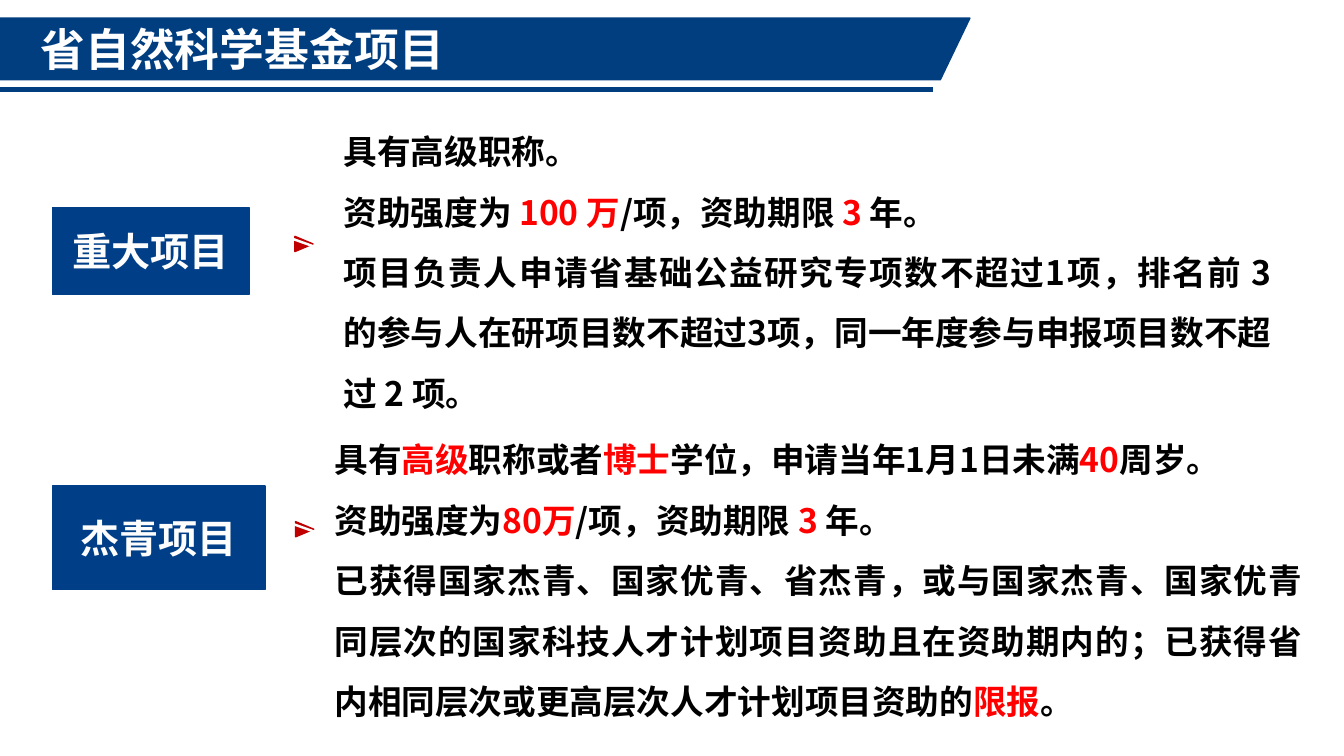
"""Build the slide on provincial natural science fund projects."""
from dataclasses import dataclass

from lxml import etree
from pptx import Presentation, util as u
from pptx.dml.color import RGBColor
from pptx.enum import shapes, text
from pptx.oxml.ns import qn


@dataclass(frozen=True)
class Theme:
    """Colours, type sizes and font of the slide."""
    font: str = "Noto Sans CJK SC"
    paper: str = "FFFFFF"
    banner: str = "013E80"
    label: str = "003F88"
    label_text: str = "FDFDFD"
    ink: str = "000000"
    accent: str = "FF0000"
    arrow: str = "C00000"
    title_size: int = 32
    label_size: int = 28
    body_size: int = 24


@dataclass(frozen=True)
class Area:
    """A frame in percent of the slide's width and height."""
    left: float
    top: float
    width: float
    height: float


@dataclass(frozen=True)
class Project:
    """A project label, its arrow and its rules, with accents between asterisks."""
    name: str
    label: Area
    arrow: Area
    body: Area
    rules: tuple[str, ...]


THEME = Theme()
WIDTH, HEIGHT = u.Inches(13.33), u.Inches(7.5)
BANNER = Area(-2.18, 2.4, 74.33, 8.13)
TITLE = Area(2.48, 2.4, 68.7, 8.13)
PROJECTS = (
    Project("重大项目", Area(3.9, 27.47, 14.63, 11.47), Area(22.05, 31.07, 1.13, 2.4),
            Area(24.83, 14, 70.5, 40.8), (
                "具有高级职称。",
                "资助强度为 *100 万*/项，资助期限 *3 *年。",
                "项目负责人申请省基础公益研究专项数不超过1项，排名前 3 的参与人在研项目数不超过3项，"
                "同一年度参与申报项目数不超过 2 项。")),
    Project("杰青项目", Area(3.9, 64.27, 15.83, 13.73), Area(22.1, 68.8, 1.13, 2.4),
            Area(24.15, 54.8, 73.5, 40.8), (
                "具有*高级*职称或者*博士*学位，申请当年1月1日未满*40*周岁。",
                "资助强度为*80万*/项，资助期限 *3 *年。",
                "已获得国家杰青、国家优青、省杰青，或与国家杰青、国家优青同层次的国家科技人才计划项目资助"
                "且在资助期内的；已获得省内相同层次或更高层次人才计划项目资助的*限报*。")),
)


def across(share: float) -> int:
    """Return a share of the slide's width."""
    return round(WIDTH * share / 100)


def down(share: float) -> int:
    """Return a share of the slide's height."""
    return round(HEIGHT * share / 100)


def frame(area: Area) -> tuple[int, int, int, int]:
    """Return an area as left, top, width and height."""
    return across(area.left), down(area.top), across(area.width), down(area.height)


def write(box, lines: tuple[str, ...], *, size: int, color: str, align=text.PP_ALIGN.LEFT,
          spacing: float = 1, anchor=text.MSO_ANCHOR.MIDDLE) -> None:
    """Write bold paragraphs, colouring the parts between asterisks."""
    body = box.text_frame
    body.word_wrap = True
    body.auto_size = text.MSO_AUTO_SIZE.NONE
    body.vertical_anchor = anchor
    for number, line in enumerate(lines):
        para = body.add_paragraph() if number else body.paragraphs[0]
        para.alignment, para.line_spacing = align, spacing
        for index, part in enumerate(line.split("*")):
            span = para.add_run()
            span.text = part
            span.font.size, span.font.bold = u.Pt(size), True
            span.font.name = THEME.font
            span.font.color.rgb = RGBColor.from_string(THEME.accent if index % 2 else color)
            east = etree.SubElement(span.font._element, qn("a:ea"))
            east.set("typeface", THEME.font)


def add_block(page, kind, area: Area, color: str, weight: float = 1):
    """Add a preset shape with one colour for fill and outline."""
    block = page.shapes.add_shape(kind, *frame(area))
    block.shadow.inherit = False
    block.fill.solid()
    block.fill.fore_color.rgb = block.line.color.rgb = RGBColor.from_string(color)
    block.line.width = u.Pt(weight)
    return block


def add_line(page, start: tuple[float, float], end: tuple[float, float],
             color: str, weight: float) -> None:
    """Add a straight line between two points given in percent."""
    line = page.shapes.add_connector(
        shapes.MSO_CONNECTOR.STRAIGHT, across(start[0]), down(start[1]), across(end[0]), down(end[1]))
    line.line.color.rgb = RGBColor.from_string(color)
    line.line.width = u.Pt(weight)
    etree.SubElement(line._element.spPr, qn("a:effectLst"))


def add_heading(page) -> None:
    """Add the banner, the rule below it and the title."""
    banner = add_block(page, shapes.MSO_SHAPE.PARALLELOGRAM, BANNER, THEME.banner, 1.25)
    banner.adjustments[0] = 0.48
    add_line(page, (-0.08, 11.87), (69.45, 11.87), THEME.banner, 3.5)
    title = page.shapes.title
    title.left, title.top, title.width, title.height = frame(TITLE)
    title.text_frame.margin_left = title.text_frame.margin_right = u.Inches(0.07)
    title.text_frame.margin_top = title.text_frame.margin_bottom = u.Inches(0.04)
    write(title, ("省自然科学基金项目",), size=THEME.title_size, color=THEME.paper)
    page.shapes._spTree.append(title._element)


def add_project(page, project: Project) -> None:
    """Add a project's label, arrow and rules."""
    label = add_block(page, shapes.MSO_SHAPE.RECTANGLE, project.label, THEME.label)
    write(label, (project.name,), size=THEME.label_size, color=THEME.label_text,
          align=text.PP_ALIGN.CENTER)
    arrow = project.arrow
    add_block(page, shapes.MSO_SHAPE.ISOSCELES_TRIANGLE, arrow, THEME.arrow).rotation = 90
    add_line(page, (arrow.left - 0.4, arrow.top + 0.45), (arrow.left + 1.25, arrow.top + 1.5),
             THEME.label_text, 1.75)
    box = page.shapes.add_textbox(*frame(project.body))
    write(box, project.rules, size=THEME.body_size, color=THEME.ink,
          align=text.PP_ALIGN.JUSTIFY, spacing=1.5, anchor=text.MSO_ANCHOR.TOP)


def main() -> None:
    """Build and save the deck."""
    deck = Presentation()
    deck.slide_width, deck.slide_height = WIDTH, HEIGHT
    page = deck.slides.add_slide(deck.slide_layouts[5])
    page.background.fill.solid()
    page.background.fill.fore_color.rgb = RGBColor.from_string(THEME.paper)
    add_heading(page)
    for project in PROJECTS:
        add_project(page, project)
    deck.save("out.pptx")


if __name__ == "__main__":
    main()
